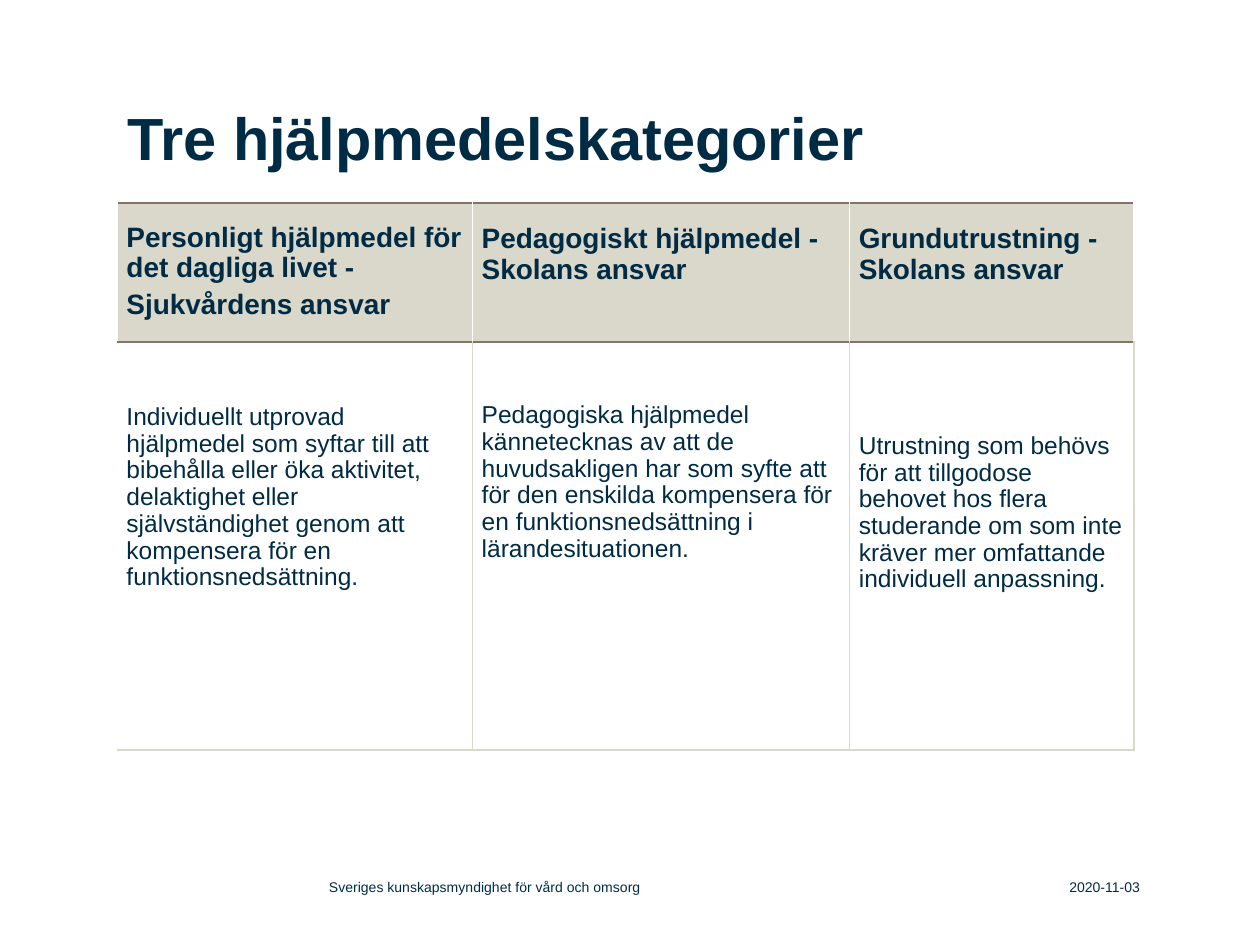
from dataclasses import dataclass

from lxml import etree
from pptx import Presentation
from pptx import util as u
from pptx.dml.color import RGBColor
from pptx.enum import text
from pptx.oxml.ns import qn


@dataclass(frozen=True)
class Theme:
    font: str = "Arial"
    ink: str = "002B45"
    sand: str = "DAD7CB"
    brown: str = "857363"
    white: str = "FFFFFF"
    title: float = 34
    heading: float = 16
    body: float = 14
    footer: float = 8


COLUMN_WIDTHS = [203, 215.5, 162.5]
ROW_HEIGHTS = [79.5, 233]
# Each cell: its paragraphs and the distance from the cell's top to the text.
HEADINGS = [
    (["Personligt hjälpmedel för det dagliga livet -", "Sjukvårdens ansvar"], 11.5),
    (["Pedagogiskt hjälpmedel - Skolans ansvar"], 12.5),
    (["Grundutrustning - Skolans ansvar"], 12.5),
]
DESCRIPTIONS = [
    (["Individuellt utprovad hjälpmedel som syftar till att bibehålla eller öka "
      "aktivitet, delaktighet eller självständighet genom att kompensera för en "
      "funktionsnedsättning."], 35.5),
    (["Pedagogiska hjälpmedel kännetecknas av att de huvudsakligen har som syfte "
      "att för den enskilda kompensera för en funktionsnedsättning i "
      "lärandesituationen."], 34.5),
    (["Utrustning som behövs för att tillgodose behovet hos flera studerande om "
      "som inte kräver mer omfattande individuell anpassning."], 52),
]


class SlideBuilder:
    def __init__(self, page, theme):
        self.page = page
        self.theme = theme

    def add_paragraphs(self, frame, paragraphs, size, bold=False, gap=0, spacing=1.0):
        for index, words in enumerate(paragraphs):
            para = frame.paragraphs[0] if index == 0 else frame.add_paragraph()
            layout = {
                "alignment": text.PP_ALIGN.LEFT,
                "line_spacing": spacing,
                "space_before": u.Pt(gap if index else 0),
                "space_after": u.Pt(gap),
            }
            for name, value in layout.items():
                setattr(para, name, value)
            span = para.add_run()
            span.text = words
            look = {"name": self.theme.font, "size": u.Pt(size), "bold": bold}
            for name, value in look.items():
                setattr(span.font, name, value)
            span.font.color.rgb = RGBColor.from_string(self.theme.ink)

    def label(self, words, left, top, width, height, size, bold=False,
              anchor=text.MSO_ANCHOR.MIDDLE):
        box = self.page.shapes.add_textbox(*map(u.Pt, (left, top, width, height)))
        frame = box.text_frame
        settings = {
            "word_wrap": True, "vertical_anchor": anchor, "margin_left": 0,
            "margin_right": 0, "margin_top": 0, "margin_bottom": 0,
        }
        for name, value in settings.items():
            setattr(frame, name, value)
        self.add_paragraphs(frame, [words], size, bold)

    def border(self, cell, side, color, width):
        """Draw one side of a cell; call in the order L, R, T, B, before the fill."""
        properties = cell._tc.get_or_add_tcPr()
        line = etree.SubElement(properties, qn(f"a:ln{side}"), w=str(u.Pt(width)))
        fill = etree.SubElement(line, qn("a:solidFill"))
        etree.SubElement(fill, qn("a:srgbClr"), val=color)

    def cell(self, cell, content, borders, fill, **style):
        paragraphs, top = content
        settings = {
            "vertical_anchor": text.MSO_ANCHOR.TOP, "margin_left": u.Pt(5.3),
            "margin_right": u.Pt(5), "margin_top": u.Pt(top), "margin_bottom": 0,
        }
        for name, value in settings.items():
            setattr(cell, name, value)
        for side, (color, width) in borders.items():
            self.border(cell, side, color, width)
        if fill:
            cell.fill.solid()
            cell.fill.fore_color.rgb = RGBColor.from_string(fill)
        else:
            cell.fill.background()
        self.add_paragraphs(cell.text_frame, paragraphs, spacing=0.97, **style)

    def category_table(self, left, top):
        theme = self.theme
        table = self.page.shapes.add_table(
            len(ROW_HEIGHTS), len(COLUMN_WIDTHS), u.Pt(left), u.Pt(top),
            u.Pt(sum(COLUMN_WIDTHS)), u.Pt(sum(ROW_HEIGHTS))).table
        table.first_row = table.horz_banding = False
        for column, width in zip(table.columns, COLUMN_WIDTHS):
            column.width = u.Pt(width)
        for row, height in zip(table.rows, ROW_HEIGHTS):
            row.height = u.Pt(height)

        white, sand, brown = (theme.white, 1), (theme.sand, 1), (theme.brown, 1)
        for index, (heading, description) in enumerate(zip(HEADINGS, DESCRIPTIONS)):
            self.cell(
                table.cell(0, index), heading,
                {"L": white, "R": white, "T": (theme.brown, 1.5), "B": brown},
                theme.sand, size=theme.heading, bold=True, gap=2)
            self.cell(
                table.cell(1, index), description,
                {"L": sand if index else white, "R": sand, "T": brown, "B": sand},
                None, size=theme.body, gap=1)


def main():
    deck = Presentation()
    deck.slide_width, deck.slide_height = u.Pt(720), u.Pt(540)
    theme = Theme()
    builder = SlideBuilder(deck.slides.add_slide(deck.slide_layouts[6]), theme)
    builder.label("Tre hjälpmedelskategorier", 72.8, 58, 538, 57, theme.title,
                  bold=True, anchor=text.MSO_ANCHOR.TOP)
    builder.category_table(67, 116)
    builder.label("Sveriges kunskapsmyndighet för vård och omsorg",
                  188, 496, 340, 21, theme.footer)
    builder.label("2020-11-03", 611, 496, 63, 21, theme.footer)
    deck.save("out.pptx")


if __name__ == "__main__":
    main()
